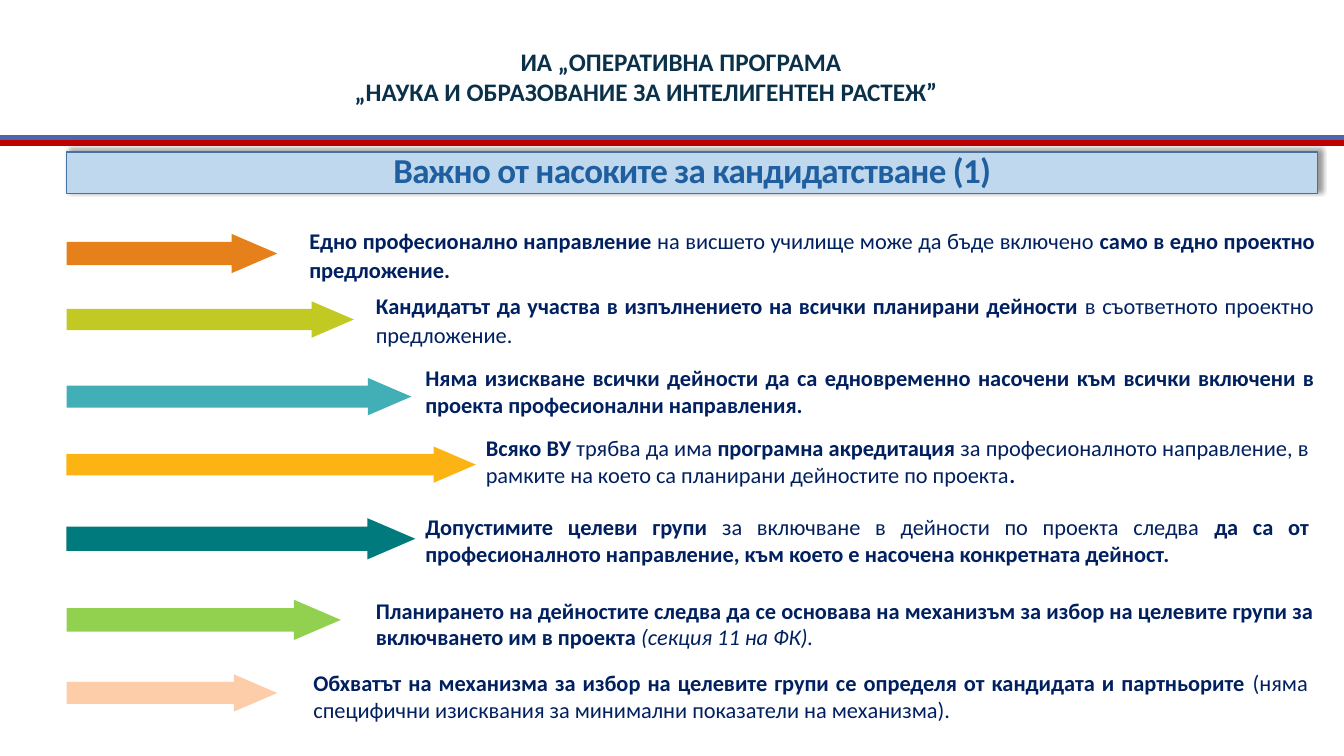
from dataclasses import dataclass

from lxml import etree
from pptx import Presentation, util as u
from pptx.dml.color import RGBColor
from pptx.enum import shapes, text
from pptx.oxml import ns

PX = 9144
ARROW_LEFT = 66
FONT = "Calibri"
COLORS = {
    "header": "0A304A",
    "blue_rule": "4A66AC",
    "red_rule": "C00000",
    "title_fill": "C0D8ED",
    "title_line": "43739E",
    "title_text": "1F5FA0",
    "body": "002060",
    "orange": "E5801B",
    "lime": "C2C923",
    "aqua": "42AFB6",
    "amber": "FCB414",
    "teal": "007A7D",
    "green": "92D050",
    "peach": "FDCDA9",
}


@dataclass(frozen=True)
class Box:
    left: int
    top: int
    width: int
    height: int

    def emu(self) -> list[int]:
        return [v * PX for v in (self.left, self.top, self.width, self.height)]


@dataclass(frozen=True)
class Run:
    text: str
    bold: bool = False
    italic: bool = False


@dataclass(frozen=True)
class Point:
    color: str
    arrow: Box
    body: Box
    runs: tuple[Run, ...]
    loose: bool = False


@dataclass(frozen=True)
class Rule:
    y: int
    color: str


RULES = (Rule(137, "blue_rule"), Rule(142, "red_rule"))

POINTS = (
    Point("orange", Box(ARROW_LEFT, 232, 209, 39), Box(297, 219, 1017, 68), (
        Run("Едно професионално направление ", True),
        Run("на висшето училище може да бъде включено "),
        Run("само в едно проектно предложение.", True),
    ), True),
    Point("lime", Box(ARROW_LEFT, 299, 285, 36), Box(363, 283, 950, 68), (
        Run("Кандидатът да участва в изпълнението на всички планирани дейности ", True),
        Run("в съответното проектно предложение."),
    ), True),
    Point("aqua", Box(ARROW_LEFT, 375, 342, 37), Box(412, 356, 902, 64), (
        Run("Няма изискване всички дейности да са едновременно насочени към "
            "всички включени в проекта професионални направления.", True),
    )),
    Point("amber", Box(ARROW_LEFT, 443, 406, 36), Box(472, 426, 836, 64), (
        Run("Всяко ВУ ", True),
        Run("трябва да има "),
        Run("програмна акредитация ", True),
        Run("за професионалното направление, в рамките на което са "
            "планирани дейностите по проекта"),
        Run(".", True),
    )),
    Point("teal", Box(ARROW_LEFT, 514, 346, 41), Box(412, 504, 896, 64), (
        Run("Допустимите целеви групи ", True),
        Run("за включване в дейности по проекта следва "),
        Run("да са от професионалното направление, към коeто е насочена "
            "конкретната дейност.", True),
    )),
    Point("green", Box(ARROW_LEFT, 595, 272, 40), Box(363, 587, 950, 64), (
        Run("Планирането на дейностите следва да се основава на механизъм за "
            "избор на целевите групи за включването им в проекта ", True),
        Run("(секция 11 на ФК).", italic=True),
    )),
    Point("peach", Box(ARROW_LEFT, 669, 209, 37), Box(301, 659, 1006, 64), (
        Run("Обхватът на механизма за избор на целевите групи се определя от "
            "кандидата и партньорите ", True),
        Run("(няма специфични изисквания за минимални показатели на механизма)."),
    )),
)


def rgb(name: str) -> RGBColor:
    return RGBColor.from_string(COLORS[name])


def add_run(p, run: Run, size: int, color: str):
    r = p.add_run()
    r.text = run.text
    r.font.name = FONT
    r.font.size = u.Pt(size)
    r.font.bold = run.bold
    r.font.italic = run.italic
    r.font.color.rgb = rgb(color)
    return r


def add_text_frame(s, box: Box):
    tf = s.shapes.add_textbox(*box.emu()).text_frame
    tf.word_wrap = True
    tf.auto_size = text.MSO_AUTO_SIZE.SHAPE_TO_FIT_TEXT
    return tf


def add_rule(s, rule: Rule, width: int) -> None:
    y = rule.y * PX
    line = s.shapes.add_connector(shapes.MSO_CONNECTOR.STRAIGHT, 0, y, width, y)
    line.line.color.rgb = rgb(rule.color)
    line.line.width = u.Pt(3.75)
    etree.SubElement(line._element.spPr, ns.qn("a:effectLst"))


def add_header(s) -> None:
    tf = add_text_frame(s, Box(342, 41, 667, 71))
    first, second = tf.paragraphs[0], tf.add_paragraph()
    first.alignment = text.PP_ALIGN.CENTER
    second.alignment = text.PP_ALIGN.LEFT
    add_run(first, Run("ИА „ОПЕРАТИВНА ПРОГРАМА", True), 18, "header")
    add_run(second, Run("„НАУКА И ОБРАЗОВАНИЕ ЗА ИНТЕЛИГЕНТЕН РАСТЕЖ”", True), 18, "header")


def add_title(s) -> None:
    sp = s.shapes.add_shape(shapes.MSO_SHAPE.RECTANGLE, *Box(66, 151, 1241, 41).emu())
    sp.fill.solid()
    sp.fill.fore_color.rgb = rgb("title_fill")
    sp.line.color.rgb = rgb("title_line")
    sp.line.width = u.Pt(1)
    sp.shadow.inherit = False
    effects = sp._element.spPr.find(ns.qn("a:effectLst"))
    shadow = etree.SubElement(
        effects, ns.qn("a:outerShdw"), blurRad=str(u.Pt(4)), dist=str(u.Pt(3)),
        dir=str(315 * 60000), algn="bl", rotWithShape="0")
    black = etree.SubElement(shadow, ns.qn("a:srgbClr"), val="000000")
    etree.SubElement(black, ns.qn("a:alpha"), val="40000")
    tf = sp.text_frame
    tf.word_wrap = True
    tf.vertical_anchor = text.MSO_ANCHOR.MIDDLE
    tf.margin_left = tf.margin_top = tf.margin_right = tf.margin_bottom = 0
    p = tf.paragraphs[0]
    p.alignment = text.PP_ALIGN.CENTER
    p.line_spacing = 0.85
    r = add_run(p, Run("Важно от насоките за кандидатстване (1)", True), 25, "title_text")
    r.font._element.set("spc", "-50")


def add_point(s, point: Point) -> None:
    sp = s.shapes.add_shape(shapes.MSO_SHAPE.RIGHT_ARROW, *point.arrow.emu())
    sp.adjustments[0] = 0.588
    sp.adjustments[1] = 1.163
    sp.fill.solid()
    sp.fill.fore_color.rgb = rgb(point.color)
    sp.line.fill.background()
    sp.shadow.inherit = False
    p = add_text_frame(s, point.body).paragraphs[0]
    p.alignment = text.PP_ALIGN.JUSTIFY
    if point.loose:
        p.line_spacing = 1.07
        p.space_after = u.Pt(8)
    for run in point.runs:
        add_run(p, run, 16, "body")


def main() -> None:
    prs = Presentation()
    prs.slide_width = 1333 * PX
    prs.slide_height = 750 * PX
    s = prs.slides.add_slide(prs.slide_layouts[6])
    for rule in RULES:
        add_rule(s, rule, prs.slide_width)
    add_header(s)
    add_title(s)
    for point in POINTS:
        add_point(s, point)
    prs.save("out.pptx")


if __name__ == "__main__":
    main()
